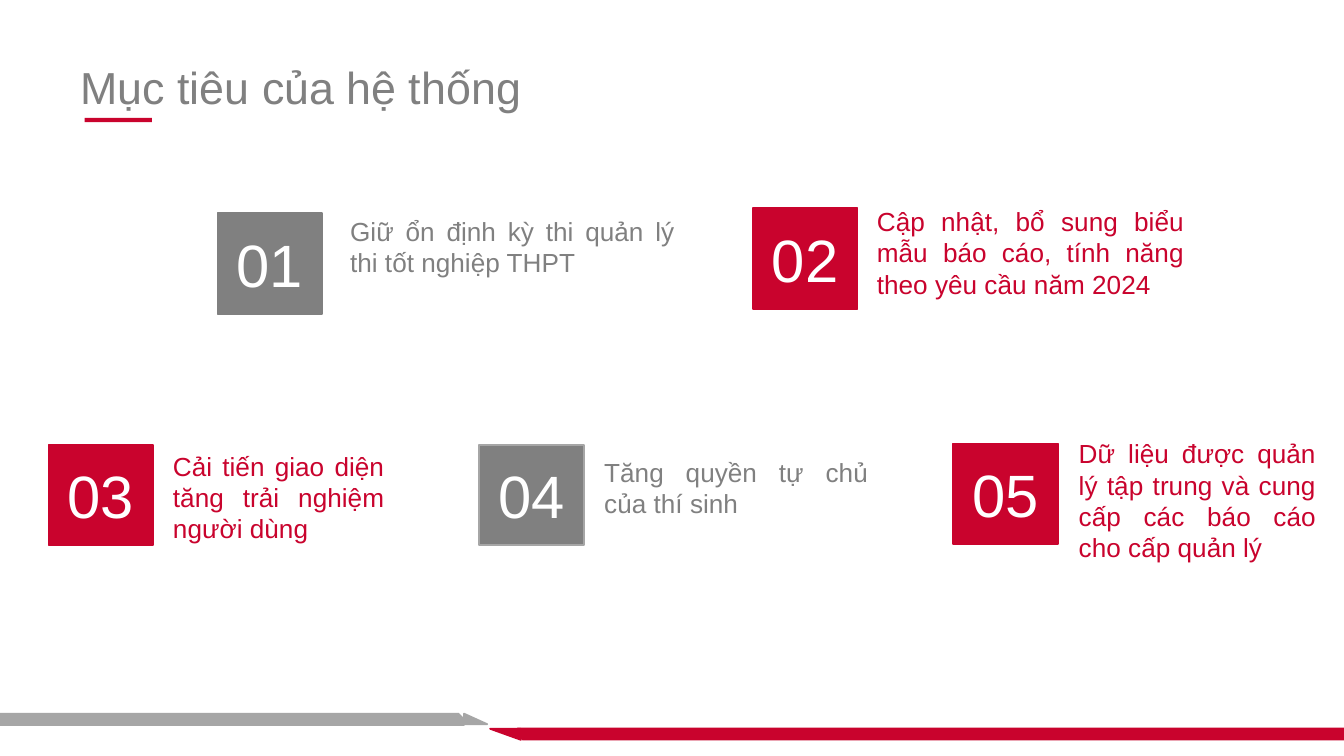
from dataclasses import dataclass

from pptx import Presentation
from pptx import util as u
from pptx.dml.color import RGBColor
from pptx.enum import shapes, text

COLORS = {"red": "C9032D", "gray": "808080", "silver": "A6A6A6", "white": "FFFFFF"}
FONT = "Arial"
SQUARE_WIDTH, SQUARE_HEIGHT = 56.2, 54


@dataclass(frozen=True)
class Box:
    left: float
    top: float
    width: float
    height: float

    def emu(self) -> tuple:
        return tuple(u.Pt(v) for v in (self.left, self.top, self.width, self.height))


@dataclass(frozen=True)
class Goal:
    left: float
    top: float
    label: Box
    wording: str
    color: str
    border: str


@dataclass(frozen=True)
class Band:
    kind: shapes.MSO_SHAPE
    box: Box
    color: str
    rotation: float = 0
    flipped: bool = False


GOALS = [
    Goal(116.5, 114.3, Box(180.5, 111.6, 188, 41),
         "Giữ ổn định kỳ thi quản lý thi tốt nghiệp THPT", "gray", "gray"),
    Goal(403.2, 111.6, Box(462.7, 106.4, 178.7, 74.9),
         "Cập nhật, bổ sung biểu mẫu báo cáo, tính năng theo yêu cầu năm 2024",
         "red", "red"),
    Goal(26, 238.2, Box(85.6, 237.6, 127.4, 74.9),
         "Cải tiến giao diện tăng trải nghiệm người dùng", "red", "red"),
    Goal(256.5, 238.2, Box(316.6, 241, 155.6, 41),
         "Tăng quyền tự chủ của thí sinh", "gray", "silver"),
    Goal(510.5, 237.6, Box(570.8, 230.9, 141.2, 92.2),
         "Dữ liệu được quản lý tập trung và cung cấp các báo cáo cho cấp quản lý",
         "red", "red"),
]

BANDS = [
    Band(shapes.MSO_SHAPE.SNIP_1_RECTANGLE, Box(0, 382.4, 248.6, 6), "silver"),
    Band(shapes.MSO_SHAPE.RIGHT_TRIANGLE, Box(248.6, 382.4, 12.4, 5.6), "silver"),
    Band(shapes.MSO_SHAPE.SNIP_1_RECTANGLE, Box(277.2, 390.3, 442.8, 5.9), "red", 180),
    Band(shapes.MSO_SHAPE.RIGHT_TRIANGLE, Box(267.8, 385.2, 5.9, 16.4), "red", 270, True),
]


def rgb(name: str) -> RGBColor:
    return RGBColor.from_string(COLORS[name])


def write(shape, wording: str, size: float, color: str, align) -> None:
    frame = shape.text_frame
    frame.word_wrap = True
    frame.text = wording
    para = frame.paragraphs[0]
    para.alignment = align
    span = para.runs[0]
    span.font.name = FONT
    span.font.size = u.Pt(size)
    span.font.color.rgb = rgb(color)


def add_block(page, kind, box: Box, fill: str, border: str | None = None):
    """Add a flat filled shape, outlined only when a border colour is given."""
    shape = page.shapes.add_shape(kind, *box.emu())
    shape.shadow.inherit = False
    shape.fill.solid()
    shape.fill.fore_color.rgb = rgb(fill)
    if border:
        shape.line.color.rgb = rgb(border)
        shape.line.width = u.Pt(1)
    else:
        shape.line.fill.background()
    return shape


def add_title(page, wording: str) -> None:
    title = page.shapes.add_textbox(*Box(36, 25.9, 648, 41).emu())
    write(title, wording, 24, "gray", text.PP_ALIGN.LEFT)
    title.text_frame.vertical_anchor = text.MSO_ANCHOR.MIDDLE
    add_block(page, shapes.MSO_SHAPE.RECTANGLE, Box(45.4, 63.2, 36, 2.2), "red")


def add_goal(page, number: int, goal: Goal) -> None:
    label = page.shapes.add_textbox(*goal.label.emu())
    write(label, goal.wording, 14, goal.color, text.PP_ALIGN.JUSTIFY)
    label.text_frame.auto_size = text.MSO_AUTO_SIZE.SHAPE_TO_FIT_TEXT

    box = Box(goal.left, goal.top, SQUARE_WIDTH, SQUARE_HEIGHT)
    square = add_block(page, shapes.MSO_SHAPE.RECTANGLE, box, goal.color, goal.border)
    write(square, f"{number:02}", 32, "white", text.PP_ALIGN.CENTER)
    square.text_frame.vertical_anchor = text.MSO_ANCHOR.MIDDLE


def add_band(page, band: Band) -> None:
    shape = add_block(page, band.kind, band.box, band.color, band.color)
    shape.rotation = band.rotation
    if band.flipped:
        shape.element.spPr.xfrm.set("flipH", "1")
    if band.kind == shapes.MSO_SHAPE.SNIP_1_RECTANGLE:
        shape.adjustments[0] = 0.5


def main() -> None:
    deck = Presentation()
    deck.slide_width, deck.slide_height = u.Pt(720), u.Pt(405)
    page = deck.slides.add_slide(deck.slide_layouts[6])
    add_title(page, "Mục tiêu của hệ thống")
    for number, goal in enumerate(GOALS, start=1):
        add_goal(page, number, goal)
    for band in BANDS:
        add_band(page, band)
    deck.save("out.pptx")


if __name__ == "__main__":
    main()
